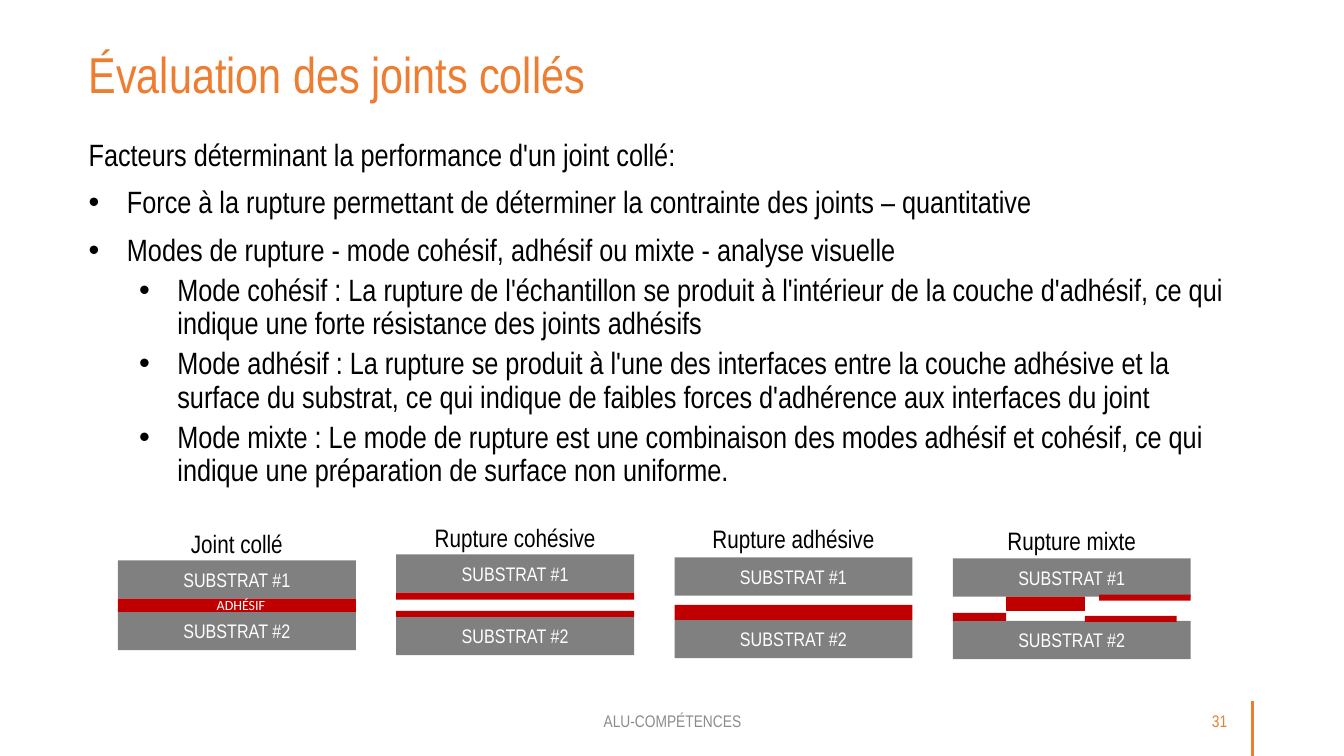
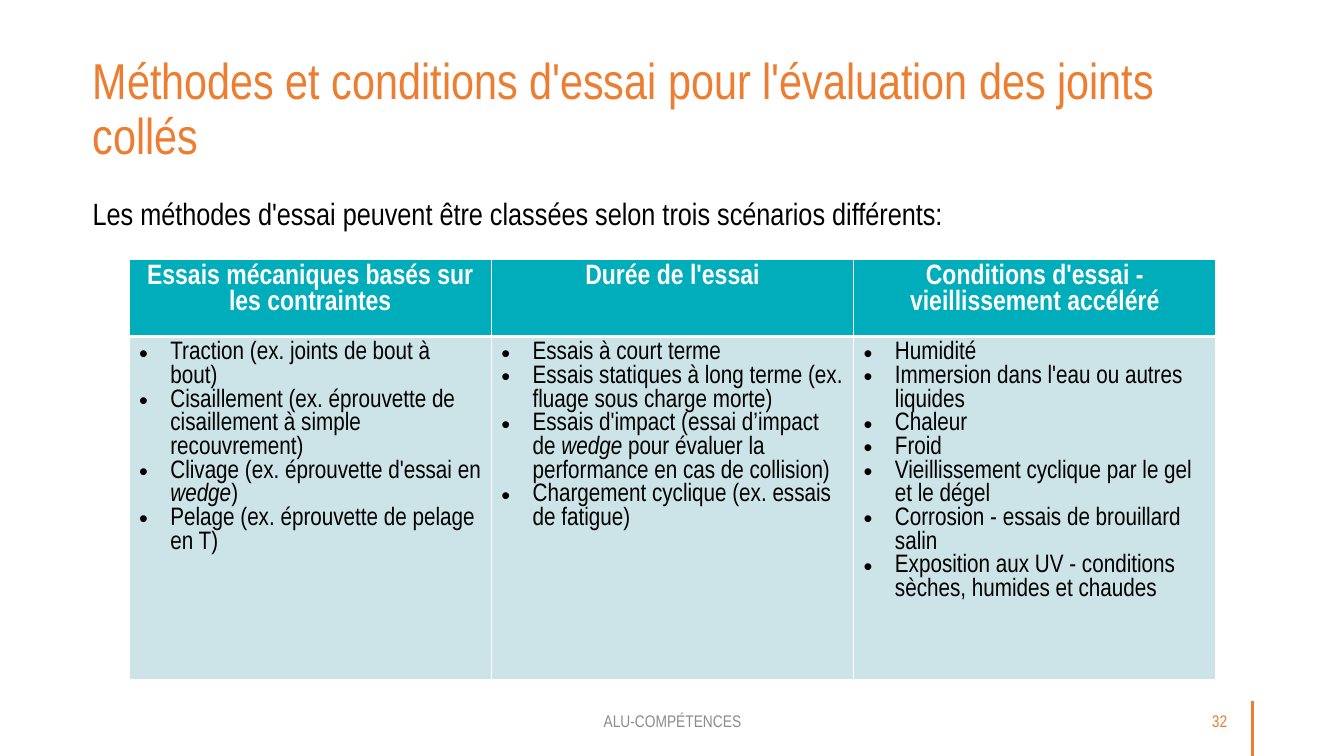
from lxml.etree import SubElement
from pptx import Presentation
from pptx.dml.color import RGBColor
from pptx.enum.shapes import MSO_CONNECTOR, MSO_SHAPE
from pptx.enum.text import MSO_ANCHOR, PP_ALIGN
from pptx.oxml.ns import qn
from pptx.util import Inches, Pt

ORANGE, BLACK, WHITE = "ED7D31", "000000", "FFFFFF"
GREY, RED, FOOTER_GREY = "808080", "C00000", "8C8C8C"
TEAL, PALE_TEAL = "00ADBA", "CCE3E7"
TITLE_ONLY = 5


def rgb(color):
    return RGBColor.from_string(color)


def write(frame, lines, size, color, align=PP_ALIGN.LEFT, spacing=None,
          inset=None, anchor=MSO_ANCHOR.TOP, bold=False, font="Arial Narrow"):
    """Fill a frame with (text, bullet indent, hang, space before) lines; _word_ is italic."""
    frame.word_wrap = True
    frame.vertical_anchor = anchor
    if inset is not None:
        frame.margin_left = frame.margin_right = Inches(inset)
        frame.margin_top = frame.margin_bottom = Inches(inset)
    for index, (text, indent, hang, before) in enumerate(lines):
        paragraph = frame.add_paragraph() if index else frame.paragraphs[0]
        paragraph.alignment = align
        paragraph.space_before = Pt(before)
        if spacing:
            paragraph.line_spacing = spacing
        if indent:
            properties = paragraph._p.get_or_add_pPr()
            properties.set("marL", str(Inches(indent)))
            properties.set("indent", str(-Inches(hang)))
            SubElement(properties, qn("a:buFont")).set("typeface", "Arial")
            SubElement(properties, qn("a:buChar")).set("char", "•")
        for part, piece in enumerate(text.split("_")):
            run = paragraph.add_run()
            run.text = piece
            run.font.name, run.font.size = font, Pt(size)
            run.font.color.rgb = rgb(color)
            run.font.bold, run.font.italic = bold, part % 2 == 1


prs = Presentation()
prs.slide_width, prs.slide_height = Inches(13.33), Inches(7.5)

# Title, footer and page number of every slide
headings = [
    ("31", "Évaluation des joints collés", 0.88, 0.5),
    ("32", "Méthodes et conditions d'essai pour l'évaluation des joints collés", 0.92, 0.56),
]
slides = []
for number, heading, left, top in headings:
    slide = prs.slides.add_slide(prs.slide_layouts[TITLE_ONLY])
    slides.append(slide)
    title = slide.shapes.title
    title.left, title.top = Inches(left), Inches(top)
    title.width, title.height = Inches(10.74), Inches(1.01)
    write(title.text_frame, [(heading, 0, 0, 0)], 36, ORANGE, spacing=0.9, inset=0)

    rule = slide.shapes.add_connector(
        MSO_CONNECTOR.STRAIGHT, Inches(12.42), Inches(7.5), Inches(12.42), Inches(6.95))
    rule.line.color.rgb = rgb(ORANGE)
    rule.line.width = Pt(2.25)
    SubElement(rule._element.spPr, qn("a:effectLst"))
    for text, x, width, color, align in [
        ("ALU-COMPÉTENCES", 4.42, 4.5, FOOTER_GREY, PP_ALIGN.CENTER),
        (number, 10.95, 1.32, ORANGE, PP_ALIGN.RIGHT),
    ]:
        footer = slide.shapes.add_textbox(Inches(x), Inches(6.95), Inches(width), Inches(0.4))
        write(footer.text_frame, [(text, 0, 0, 0)], 12, color, align, anchor=MSO_ANCHOR.MIDDLE)

evaluation, methods = slides

# Slide 31: factors
factors = [
    ("Facteurs déterminant la performance d'un joint collé:", 0, 0, 0),
    ("Force à la rupture permettant de déterminer la contrainte des joints – quantitative",
     0.38, 0.38, 10),
    ("Modes de rupture - mode cohésif, adhésif ou mixte - analyse visuelle", 0.38, 0.38, 10),
    ("Mode cohésif : La rupture de l'échantillon se produit à l'intérieur de la couche "
     "d'adhésif, ce qui indique une forte résistance des joints adhésifs", 0.88, 0.38, 5),
    ("Mode adhésif : La rupture se produit à l'une des interfaces entre la couche adhésive "
     "et la surface du substrat, ce qui indique de faibles forces d'adhérence aux interfaces "
     "du joint", 0.88, 0.38, 5),
    ("Mode mixte : Le mode de rupture est une combinaison des modes adhésif et cohésif, ce "
     "qui indique une préparation de surface non uniforme.", 0.88, 0.38, 5),
]
body = evaluation.shapes.add_textbox(Inches(0.88), Inches(1.39), Inches(11.6), Inches(3.6))
write(body.text_frame, factors, 22, BLACK, spacing=0.9, inset=0)

# Slide 31: caption, caption top, substrate tops, adhesive patches (offset, top, width, height)
JOINT_WIDTH, SUBSTRATE_HEIGHT = 2.36, 0.38
joints = [
    ("Joint collé", 5.19, (5.56, 6.07), [(0, 5.94, JOINT_WIDTH, 0.13)]),
    ("Rupture cohésive", 5.13, (5.5, 6.12),
     [(0, 5.88, JOINT_WIDTH, 0.07), (0, 6.06, JOINT_WIDTH, 0.06)]),
    ("Rupture adhésive", 5.14, (5.53, 6.15), [(0, 6, JOINT_WIDTH, 0.15)]),
    ("Rupture mixte", 5.16, (5.54, 6.16),
     [(0, 6.08, 0.53, 0.08), (0.53, 5.92, 0.78, 0.14),
      (1.31, 6.11, 0.91, 0.06), (1.45, 5.9, 0.91, 0.06)]),
]
for column, (caption, caption_top, substrate_tops, patches) in enumerate(joints):
    left = 1.17 + 2.76 * column
    joint = evaluation.shapes.add_group_shape()
    layers = [(f"SUBSTRAT #{row}", GREY, 0, top, JOINT_WIDTH, SUBSTRATE_HEIGHT)
              for row, top in enumerate(substrate_tops, 1)]
    layers += [("", RED, *patch) for patch in patches]
    for text, color, offset, top, width, height in layers:
        layer = joint.shapes.add_shape(
            MSO_SHAPE.RECTANGLE, Inches(left + offset), Inches(top), Inches(width), Inches(height))
        layer.shadow.inherit = False
        layer.fill.solid()
        layer.fill.fore_color.rgb = rgb(color)
        layer.line.fill.background()
        if text:
            write(layer.text_frame, [(text, 0, 0, 0)], 14, WHITE, PP_ALIGN.CENTER,
                  inset=0, anchor=MSO_ANCHOR.MIDDLE)
    label = evaluation.shapes.add_textbox(
        Inches(left), Inches(caption_top), Inches(JOINT_WIDTH), Inches(0.4))
    write(label.text_frame, [(caption, 0, 0, 0)], 18, BLACK, PP_ALIGN.CENTER)

adhesive = evaluation.shapes.add_textbox(Inches(1.66), Inches(5.87), Inches(1.46), Inches(0.27))
write(adhesive.text_frame, [("ADHÉSIF", 0, 0, 0)], 10, WHITE, PP_ALIGN.CENTER, font="Calibri")

# Slide 32: introduction and table of test methods
intro = methods.shapes.add_textbox(Inches(0.82), Inches(1.88), Inches(9.84), Inches(0.47))
write(intro.text_frame,
      [("Les méthodes d'essai peuvent être classées selon trois scénarios différents:", 0, 0, 0)],
      22, BLACK)

scenarios = [
    ("Essais mécaniques basés sur les contraintes", [
        "Traction (ex. joints de bout à bout)",
        "Cisaillement (ex. éprouvette de cisaillement à simple recouvrement)",
        "Clivage (ex. éprouvette d'essai en _wedge_)",
        "Pelage (ex. éprouvette de pelage en T)",
    ]),
    ("Durée de l'essai", [
        "Essais à court terme",
        "Essais statiques à long terme (ex. fluage sous charge morte)",
        "Essais d'impact (essai d’impact de _wedge_ pour évaluer la performance en cas de collision)",
        "Chargement cyclique (ex. essais de fatigue)",
    ]),
    ("Conditions d'essai - vieillissement accéléré", [
        "Humidité",
        "Immersion dans l'eau ou autres liquides",
        "Chaleur",
        "Froid",
        "Vieillissement cyclique par le gel et le dégel",
        "Corrosion - essais de brouillard salin",
        "Exposition aux UV - conditions sèches, humides et chaudes",
    ]),
]
table = methods.shapes.add_table(
    2, len(scenarios), Inches(1.28), Inches(2.57), Inches(10.78), Inches(3.3)).table
table.first_row = table.horz_banding = False
table.rows[0].height, table.rows[1].height = Inches(0.61), Inches(2.69)
for column, (scenario, tests) in enumerate(scenarios):
    header, content = table.cell(0, column), table.cell(1, column)
    write(header.text_frame, [(scenario, 0, 0, 0)], 20, WHITE, PP_ALIGN.CENTER, bold=True)
    write(content.text_frame, [(test, 0.31, 0.31, 0) for test in tests], 18, BLACK)
    for cell, color, top_width, bottom_width in [
        (header, TEAL, 1, 3), (content, PALE_TEAL, 3, 1),
    ]:
        properties = cell._tc.get_or_add_tcPr()
        for side, width in [("L", 1), ("R", 1), ("T", top_width), ("B", bottom_width)]:
            border = SubElement(properties, qn(f"a:ln{side}"), w=str(Pt(width)))
            SubElement(SubElement(border, qn("a:solidFill")), qn("a:srgbClr"), val=WHITE)
        cell.fill.solid()
        cell.fill.fore_color.rgb = rgb(color)

prs.save("out.pptx")
